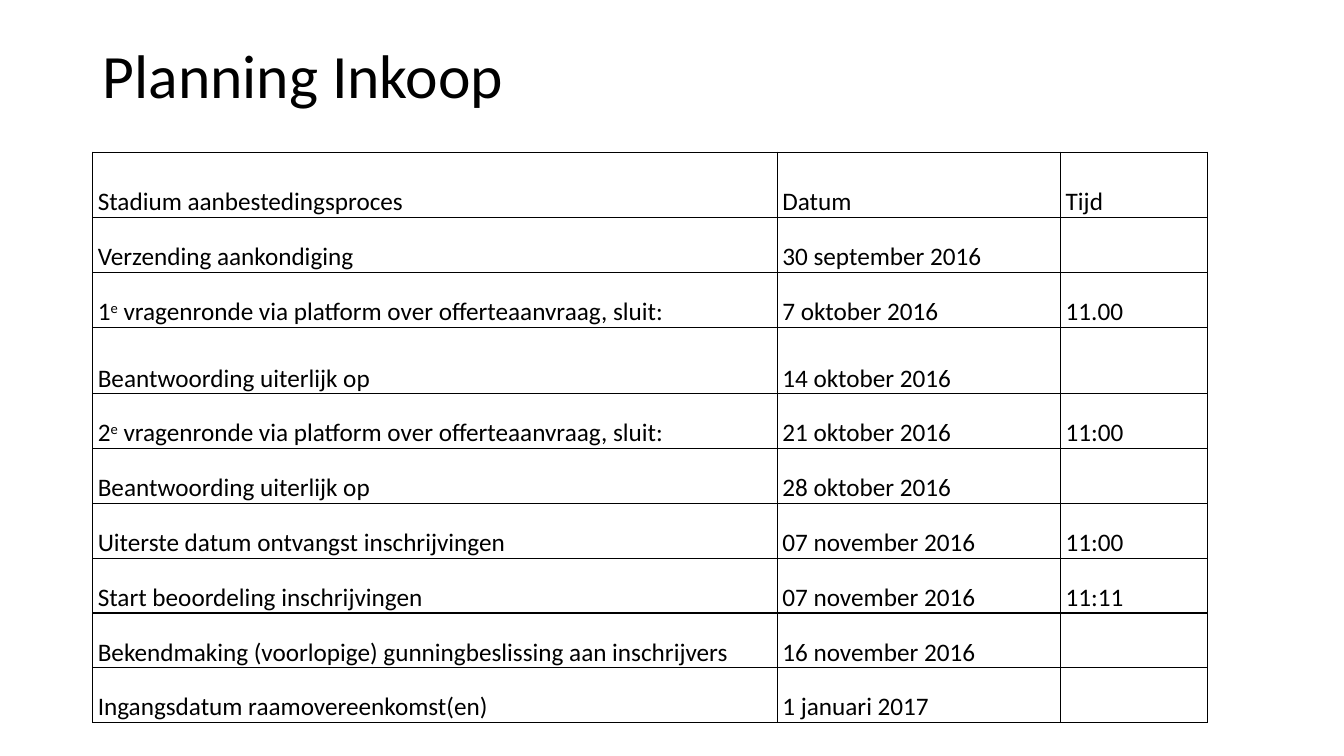
"""Build the purchasing schedule slide with its title and planning table."""
import pptx
import pptx.dml.color
import pptx.enum.text
import pptx.oxml.ns
import pptx.util
from lxml import etree
from pptx.util import Inches

FONT = "Calibri"
BLACK = "000000"
COLUMNS = (6.79, 2.81, 1.46)
TABLE_HEIGHT = 5.66
TALL_ROWS = {0: 0.65, 3: 0.66}
QUESTIONS = " vragenronde via platform over offerteaanvraag, sluit:"
SCHEDULE = (
    (("Stadium aanbestedingsproces",), "Datum", "Tijd"),
    (("Verzending aankondiging",), "30 september 2016", ""),
    (("1", "e", QUESTIONS), "7 oktober 2016", "11.00"),
    (("Beantwoording uiterlijk op",), "14 oktober 2016", ""),
    (("2", "e", QUESTIONS), "21 oktober 2016", "11:00"),
    (("Beantwoording uiterlijk op",), "28 oktober 2016", ""),
    (("Uiterste datum ontvangst inschrijvingen",), "07 november 2016", "11:00"),
    (("Start beoordeling inschrijvingen",), "07 november 2016", "11:11"),
    (("Bekendmaking (voorlopige) gunningbeslissing aan inschrijvers",),
     "16 november 2016", ""),
    (("Ingangsdatum raamovereenkomst(en)",), "1 januari 2017", ""),
)


def rgb(value):
    return pptx.dml.color.RGBColor.from_string(value)


def add_run(p, text, size, superscript=False):
    r = p.add_run()
    r.text = text
    r.font.name = FONT
    r.font.size = pptx.util.Pt(size)
    r.font.color.rgb = rgb(BLACK)
    if superscript:
        r.font._element.set("baseline", "30000")


def add_title(s, text):
    sp = s.shapes.add_textbox(Inches(0.92), Inches(0.4), Inches(11.5), Inches(1.45))
    tf = sp.text_frame
    tf.word_wrap = True
    tf.vertical_anchor = pptx.enum.text.MSO_ANCHOR.TOP
    p = tf.paragraphs[0]
    p.line_spacing = 0.9
    add_run(p, text, 44)


def add_borders(cell):
    qn = pptx.oxml.ns.qn
    tc_pr = cell._tc.get_or_add_tcPr()
    for side in ("a:lnL", "a:lnR", "a:lnT", "a:lnB"):
        line = etree.SubElement(tc_pr, qn(side), w=str(pptx.util.Pt(1)))
        fill = etree.SubElement(line, qn("a:solidFill"))
        etree.SubElement(fill, qn("a:srgbClr"), val=BLACK)


def fill_cell(cell, parts):
    add_borders(cell)
    cell.fill.background()
    cell.vertical_anchor = pptx.enum.text.MSO_ANCHOR.BOTTOM
    cell.margin_left = cell.margin_right = Inches(0.05)
    cell.margin_top = cell.margin_bottom = 0
    for i, text in enumerate(parts):
        add_run(cell.text_frame.paragraphs[0], text, 18, superscript=i == 1)


def add_schedule(s):
    frame = s.shapes.add_table(
        len(SCHEDULE), len(COLUMNS), Inches(0.92), Inches(1.51),
        Inches(sum(COLUMNS)), Inches(TABLE_HEIGHT))
    table = frame.table
    table.first_row = table.horz_banding = False
    for column, width in zip(table.columns, COLUMNS):
        column.width = Inches(width)
    regular = ((TABLE_HEIGHT - sum(TALL_ROWS.values()))
               / (len(SCHEDULE) - len(TALL_ROWS)))
    for i, (stage, date, time) in enumerate(SCHEDULE):
        table.rows[i].height = Inches(TALL_ROWS.get(i, regular))
        for j, parts in enumerate((stage, (date,), (time,) if time else ())):
            fill_cell(table.cell(i, j), parts)


def main():
    prs = pptx.Presentation()
    prs.slide_width = Inches(13.33)
    prs.slide_height = Inches(7.5)
    s = prs.slides.add_slide(prs.slide_layouts[6])
    add_title(s, "Planning Inkoop")
    add_schedule(s)
    prs.save("out.pptx")


if __name__ == "__main__":
    main()
